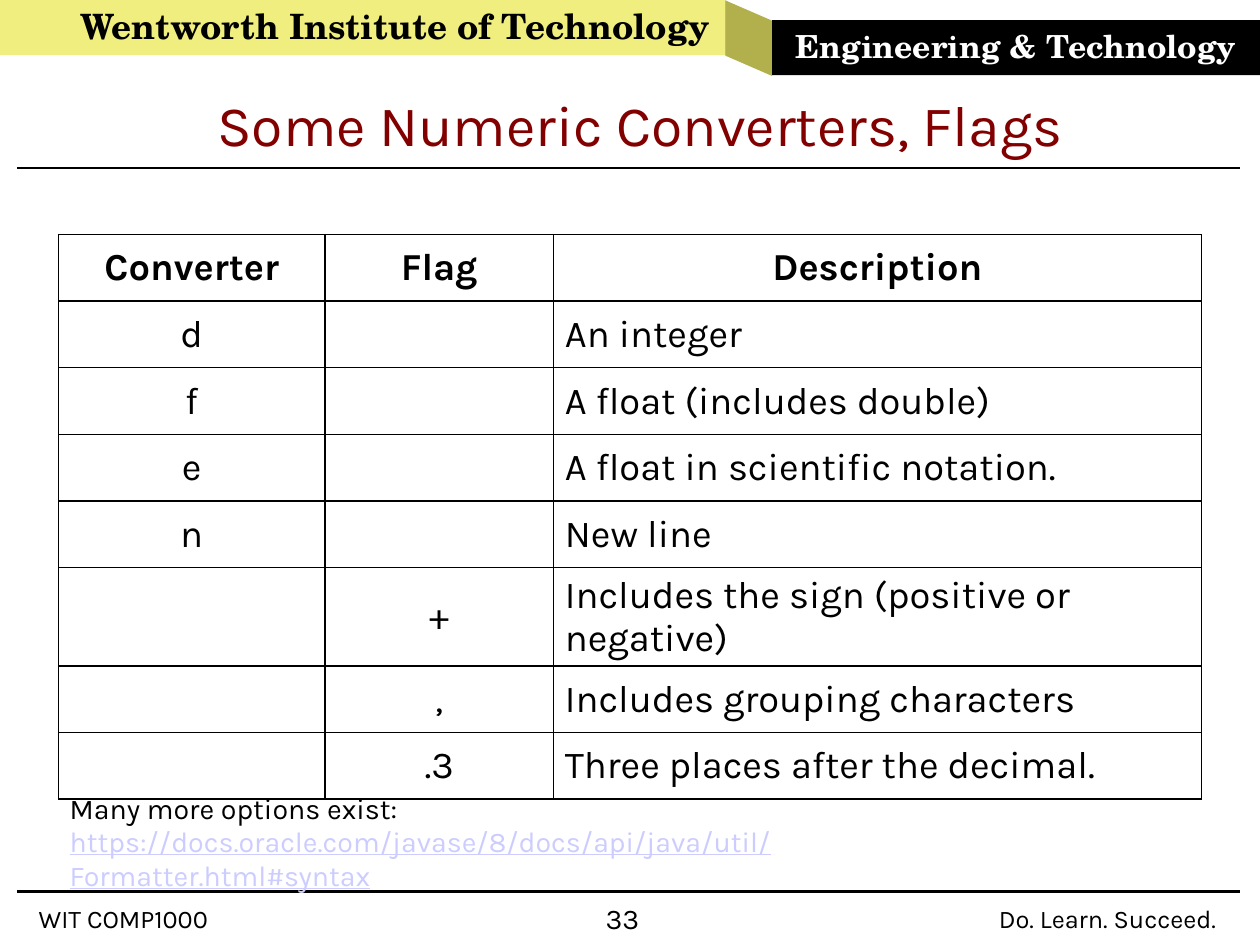
from lxml import etree
from pptx import Presentation
from pptx.dml.color import RGBColor as RGB
from pptx.enum.shapes import MSO_CONNECTOR, MSO_SHAPE as SHAPE
from pptx.enum.text import MSO_ANCHOR as ANCHOR, MSO_AUTO_SIZE as AUTO, PP_ALIGN as ALIGN
from pptx.oxml.ns import qn
from pptx.util import Cm, Pt

COLORS = {"black": "000000", "white": "FFFFFF", "title": "820000", "link": "CCCCFF",
          "band": "E3DE00", "fold": "928F00"}


def style(p, size, color="black", font="Karla", bold=False, spacing=0.98, align=ALIGN.LEFT):
    p.alignment = align
    p.line_spacing = spacing
    for r in p.runs:
        r.font.size = Pt(size)
        r.font.name = font
        r.font.bold = bold
        r.font.color.rgb = RGB.from_string(COLORS[color])


def add_fill(parent, color, alpha=100):
    fill = etree.SubElement(parent, qn("a:solidFill"))
    clr = etree.SubElement(fill, qn("a:srgbClr"), val=COLORS[color])
    if alpha < 100:
        etree.SubElement(clr, qn("a:alpha"), val=str(alpha * 1000))


prs = Presentation()
prs.slide_width, prs.slide_height = Cm(28), Cm(21)
s = prs.slides.add_slide(prs.slide_layouts[5])

banner = [
    (SHAPE.RECTANGLE, 0, 0, 16.13, 1.22, "band", 50),
    (SHAPE.PARALLELOGRAM, 15.8, 0.33, 1.68, 1.04, "fold", 70),
    (SHAPE.RECTANGLE, 17.16, 0.45, 10.84, 1.22, "black", 100),
]
shapes = []
for kind, x, y, w, h, color, alpha in banner:
    sp = s.shapes.add_shape(kind, Cm(x), Cm(y), Cm(w), Cm(h))
    sp.shadow.inherit = False
    sp.fill.solid()
    sp.fill.fore_color.rgb = RGB.from_string(COLORS[color])
    if alpha < 100:
        clr = sp.fill._xPr.find(qn("a:solidFill")).find(qn("a:srgbClr"))
        etree.SubElement(clr, qn("a:alpha"), val=str(alpha * 1000))
    sp.line.fill.background()
    shapes.append(sp)
school, fold, division = shapes
fold.rotation = 90
fold.adjustments[0] = 0.434

school.text_frame.text = "Wentworth Institute of Technology"
school.text_frame.margin_left = Cm(1.78)
school.text_frame.margin_right = 0
style(school.text_frame.paragraphs[0], 22, font="TeX Gyre Schola", bold=True)
division.text_frame.text = "Engineering & Technology"
style(division.text_frame.paragraphs[0], 20, "white", "TeX Gyre Schola", True, align=ALIGN.CENTER)
for sp in (school, division):
    sp.text_frame.vertical_anchor = ANCHOR.MIDDLE

for y in (3.73, 19.81):
    rule = s.shapes.add_connector(MSO_CONNECTOR.STRAIGHT, Cm(0.38), Cm(y), Cm(27.56), Cm(y))
    rule.line.color.rgb = RGB.from_string(COLORS["black"])
    rule.line.width = Pt(1.5)
    etree.SubElement(rule._element.spPr, qn("a:effectLst"))

title = s.shapes.title
title.left, title.top, title.width, title.height = Cm(3.43), Cm(0.86), Cm(21.59), Cm(3.51)
tf = title.text_frame
tf.text = "Some Numeric Converters, Flags"
tf.auto_size = AUTO.NONE
tf.vertical_anchor = ANCHOR.MIDDLE
tf.margin_left = tf.margin_top = tf.margin_right = tf.margin_bottom = 0
style(tf.paragraphs[0], 36, "title", spacing=1.17, align=ALIGN.CENTER)

rows = [
    ("Converter", "Flag", "Description"),
    ("d", "", "An integer"),
    ("f", "", "A float (includes double)"),
    ("e", "", "A float in scientific notation."),
    ("n", "", "New line"),
    ("", "+", "Includes the sign (positive or negative)"),
    ("", ",", "Includes grouping characters"),
    ("", ".3", "Three places after the decimal."),
]
widths = (5.92, 5.08, 14.4)
row_height = 1.48
table = s.shapes.add_table(len(rows), len(widths), Cm(1.3), Cm(5.21),
                           Cm(sum(widths)), Cm(row_height * len(rows))).table
table.first_row = table.horz_banding = False
for col, width in zip(table.columns, widths):
    col.width = Cm(width)
for i, row in enumerate(rows):
    table.rows[i].height = Cm(row_height)
    for j, text in enumerate(row):
        cell = table.cell(i, j)
        cell.text = text
        cell.vertical_anchor = ANCHOR.MIDDLE
        align = ALIGN.LEFT if i and j == 2 else ALIGN.CENTER
        style(cell.text_frame.paragraphs[0], 24, bold=i == 0, align=align)
        tcPr = cell._tc.get_or_add_tcPr()
        for side in ("a:lnL", "a:lnR", "a:lnT", "a:lnB"):
            add_fill(etree.SubElement(tcPr, qn(side), w=str(Pt(1))), "black")
        cell.fill.background()

tf = s.shapes.add_textbox(Cm(1.3), Cm(17.48), Cm(21.62), Cm(1.78)).text_frame
tf.word_wrap = True
tf.text = "Many more options exist:"
style(tf.paragraphs[0], 18)
link = tf.add_paragraph()
link.text = "https://docs.oracle.com/javase/8/docs/api/java/util/Formatter.html#syntax"
style(link, 18, "link")
link.runs[0].font.underline = True

footers = [
    ("WIT COMP1000", 0.86, 20.07, 4.9, 16),
    ("33", 13.46, 20.04, 1.02, 18),
    ("Do. Learn. Succeed.", 22.2, 20.07, 5.33, 16),
]
for text, x, y, w, size in footers:
    tf = s.shapes.add_textbox(Cm(x), Cm(y), Cm(w), Cm(0.71)).text_frame
    tf.word_wrap = True
    tf.margin_left = tf.margin_right = tf.margin_bottom = 0
    tf.margin_top = Cm(0.05)
    tf.text = text
    style(tf.paragraphs[0], size, spacing=0.93)

prs.save("out.pptx")
